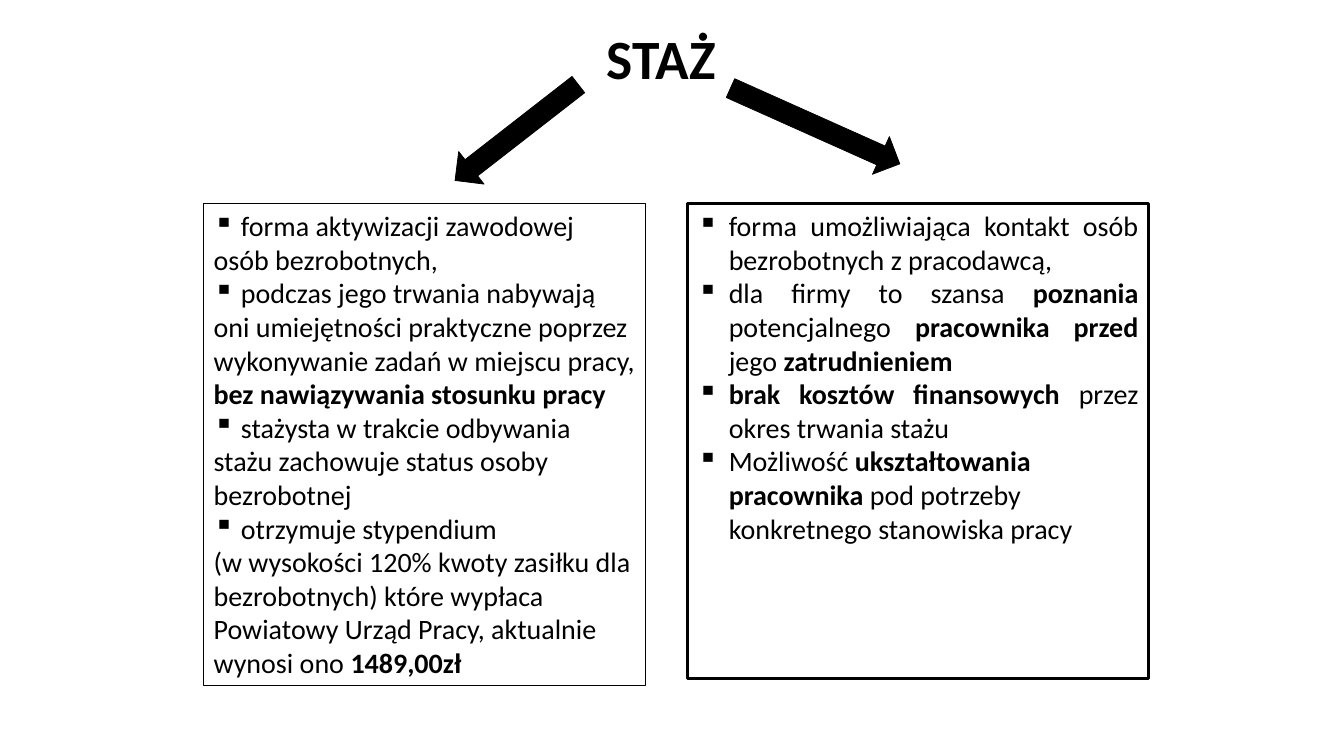
from lxml.etree import SubElement
from pptx import Presentation
from pptx.dml.color import RGBColor
from pptx.enum.shapes import MSO_SHAPE as Shape
from pptx.enum.text import MSO_ANCHOR as Anchor, MSO_AUTO_SIZE as AutoSize, PP_ALIGN as Align
from pptx.oxml.ns import qn
from pptx.util import Emu, Inches, Pt

BLACK = RGBColor(0, 0, 0)
FONT = "Calibri"
BULLET = "▪"

# Content: **bold** parts, \v for a line break
TITLE = "STAŻ"
TRAINEE = [
    " forma aktywizacji zawodowej osób bezrobotnych,",
    " podczas jego trwania nabywają oni umiejętności praktyczne poprzez "
    "wykonywanie zadań w miejscu pracy, **bez nawiązywania stosunku pracy**",
    " stażysta w trakcie odbywania stażu zachowuje status osoby bezrobotnej",
    " otrzymuje stypendium \v(w wysokości 120% kwoty zasiłku dla bezrobotnych) "
    "które wypłaca Powiatowy Urząd Pracy, aktualnie wynosi ono **1489,00zł**",
]
EMPLOYER = [
    "forma umożliwiająca kontakt osób bezrobotnych z pracodawcą,",
    "dla firmy to szansa **poznania **potencjalnego **pracownika przed **jego **zatrudnieniem**",
    "**brak kosztów finansowych **przez okres trwania stażu",
    "Możliwość **ukształtowania pracownika **pod potrzeby konkretnego stanowiska pracy",
]

# Layout in inches
BOX_TOP = 2.02
TITLE_AREA = (2.06, 0.29, 9, 1.25)
# left, width, height, border, hanging indent, number of justified items, items
BOXES = [
    (2.02, 4.38, 4.78, 1, 0, 0, TRAINEE),
    (6.82, 4.57, 4.71, 2.25, 0.31, 3, EMPLOYER),
]
# left, top, length, rotation
ARROW_WIDTH = 0.41
ARROWS = [(4.92, 0.54, 1.55, 52.1), (7.88, 0.33, 1.84, 294.1)]


def set_font(paragraph, size):
    paragraph.font.name = FONT
    paragraph.font.size = Pt(size)
    paragraph.font.color.rgb = BLACK


def add_outlined(slide, kind, area, border):
    shape = slide.shapes.add_shape(kind, *map(Inches, area))
    shape.shadow.inherit = False
    shape.line.color.rgb = BLACK
    shape.line.width = Pt(border)
    return shape


def write_item(paragraph, item, indent, align):
    paragraph.alignment = align
    set_font(paragraph, 20)
    properties = paragraph._p.get_or_add_pPr()
    properties.set("marL", str(Inches(indent)))
    properties.set("indent", str(Emu(-Inches(indent))))
    SubElement(properties, qn("a:buChar")).set("char", BULLET)
    # The bullet goes before the default run properties
    properties.insert(0, properties[-1])
    for position, part in enumerate(item.split("**")):
        if not part:
            continue
        for line_number, line in enumerate(part.split("\v")):
            if line_number:
                paragraph.add_line_break()
            run = paragraph.add_run()
            run.text = line
            if position % 2:
                run.font.bold = True


def add_box(slide, left, width, height, border, indent, justified, items):
    box = add_outlined(slide, Shape.RECTANGLE, (left, BOX_TOP, width, height), border)
    box.fill.background()
    frame = box.text_frame
    frame.word_wrap = True
    frame.auto_size = AutoSize.SHAPE_TO_FIT_TEXT
    frame.vertical_anchor = Anchor.TOP
    for number, item in enumerate(items):
        paragraph = frame.add_paragraph() if number else frame.paragraphs[0]
        write_item(paragraph, item, indent, Align.JUSTIFY if number < justified else Align.LEFT)


def add_arrow(slide, left, top, length, rotation):
    arrow = add_outlined(slide, Shape.DOWN_ARROW, (left, top, ARROW_WIDTH, length), 0.5)
    arrow.fill.solid()
    arrow.fill.fore_color.rgb = BLACK
    arrow.rotation = rotation


def add_title(slide):
    title = slide.shapes.title
    title.left, title.top, title.width, title.height = map(Inches, TITLE_AREA)
    frame = title.text_frame
    frame.text = TITLE
    frame.auto_size = AutoSize.NONE
    frame.vertical_anchor = Anchor.TOP
    frame.margin_top = Inches(0.02)
    heading = frame.paragraphs[0]
    heading.alignment = Align.CENTER
    heading.line_spacing = 0.9
    set_font(heading, 39.6)
    heading.font.bold = True


def main():
    deck = Presentation()
    deck.slide_width, deck.slide_height = Inches(13.33), Inches(7.5)
    slide = deck.slides.add_slide(deck.slide_layouts[5])
    add_title(slide)
    for arrow in ARROWS:
        add_arrow(slide, *arrow)
    for box in BOXES:
        add_box(slide, *box)
    deck.save("out.pptx")


if __name__ == "__main__":
    main()
